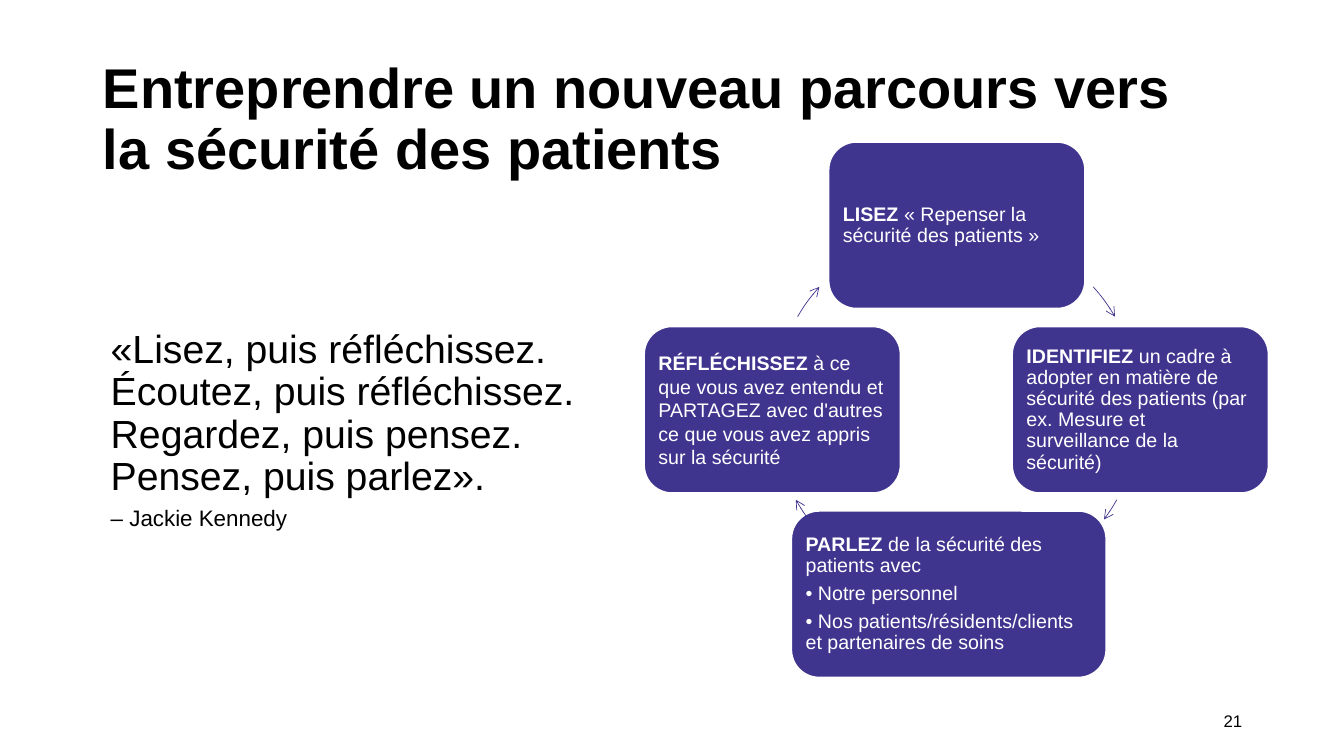
from dataclasses import dataclass
from typing import Any

from lxml.etree import SubElement
from pptx import Presentation
from pptx.dml.color import RGBColor
from pptx.enum.shapes import MSO_SHAPE
from pptx.enum.text import MSO_ANCHOR, MSO_AUTO_SIZE, PP_ALIGN
from pptx.oxml.ns import qn
from pptx.util import Pt

PX = 9144  # EMU per px, 100 px to the inch


@dataclass(frozen=True)
class Theme:
    font: str = "Arial"
    ink: RGBColor = RGBColor(0x00, 0x00, 0x00)
    paper: RGBColor = RGBColor(0xFF, 0xFF, 0xFF)
    accent: RGBColor = RGBColor(0x3F, 0x35, 0x8F)
    title_size: int = 40
    quote_size: int = 28
    author_size: int = 16
    step_size: int = 14
    number_size: int = 12


THEME = Theme()


@dataclass(frozen=True)
class Frame:
    left: int
    top: int
    width: int
    height: int

    def emu(self) -> tuple[int, ...]:
        return tuple(value * PX for value in (self.left, self.top, self.width, self.height))


@dataclass(frozen=True)
class Step:
    """A box of the cycle and the arc, in degrees clockwise from east, that leaves it."""
    frame: Frame
    keyword: str
    lines: tuple[str, ...]
    arc: tuple[float, float]
    spacing: float = 0.9


CYCLE = Frame(766, 224, 365, 365)
STEPS = (
    Step(Frame(822, 141, 254, 165), "LISEZ",
         (" « Repenser la sécurité des patients »",), (318.1, 329.6)),
    Step(Frame(1004, 324, 254, 165), "IDENTIFIEZ",
         (" un cadre à adopter en matière de sécurité des patients "
          "(par ex. Mesure et surveillance de la sécurité)",), (29.3, 36.6)),
    Step(Frame(785, 507, 312, 165), "PARLEZ",
         (" de la sécurité des patients avec", "• Notre personnel",
          "• Nos patients/résidents/clients et partenaires de soins"), (143.4, 150.7)),
    Step(Frame(639, 324, 254, 165), "RÉFLÉCHISSEZ",
         (" à ce que vous avez entendu et PARTAGEZ avec d'autres "
          "ce que vous avez appris sur la sécurité",), (210.4, 221.9), 1.0),
)


def apply_format(target: Any, values: dict[str, Any]) -> None:
    for name, value in values.items():
        setattr(target, name, value)


def format_span(span: Any, size: int, color: RGBColor, bold: bool = False) -> None:
    apply_format(span.font, {"name": THEME.font, "size": Pt(size), "bold": bold})
    span.font.color.rgb = color


def add_span(para: Any, text: str, size: int, color: RGBColor, bold: bool = False) -> None:
    span = para.add_run()
    span.text = text
    format_span(span, size, color, bold)


def next_para(text_frame: Any, index: int) -> Any:
    return text_frame.add_paragraph() if index else text_frame.paragraphs[0]


def add_title(page: Any, frame: Frame, text: str) -> None:
    title = page.shapes.title
    title.left, title.top, title.width, title.height = frame.emu()
    apply_format(title.text_frame, {"auto_size": MSO_AUTO_SIZE.NONE, "word_wrap": True,
                                    "vertical_anchor": MSO_ANCHOR.BOTTOM})
    para = title.text_frame.paragraphs[0]
    para.text = text
    apply_format(para, {"alignment": PP_ALIGN.LEFT, "line_spacing": 0.9,
                        "space_before": Pt(0)})
    for span in para.runs:
        format_span(span, THEME.title_size, THEME.ink, True)


def add_text(page: Any, frame: Frame, lines: tuple[tuple[str, int], ...],
             anchor: MSO_ANCHOR, para_format: dict[str, Any]) -> None:
    text_frame = page.shapes.add_textbox(*frame.emu()).text_frame
    apply_format(text_frame, {"word_wrap": True, "vertical_anchor": anchor})
    for index, (text, size) in enumerate(lines):
        para = next_para(text_frame, index)
        apply_format(para, {"space_after": Pt(6), **para_format})
        add_span(para, text, size, THEME.ink)


def add_step(page: Any, step: Step) -> None:
    box = page.shapes.add_shape(MSO_SHAPE.ROUNDED_RECTANGLE, *step.frame.emu())
    box.shadow.inherit = False
    box.fill.solid()
    box.fill.fore_color.rgb = THEME.accent
    box.line.color.rgb = THEME.paper
    box.line.width = Pt(1)
    margins = {f"margin_{side}": 6 * PX for side in ("left", "top", "right", "bottom")}
    apply_format(box.text_frame, {"word_wrap": True,
                                  "vertical_anchor": MSO_ANCHOR.MIDDLE, **margins})
    for index, line in enumerate(step.lines):
        para = next_para(box.text_frame, index)
        apply_format(para, {"alignment": PP_ALIGN.LEFT, "line_spacing": step.spacing,
                            "space_after": Pt(5)})
        if index == 0:
            add_span(para, step.keyword, THEME.step_size, THEME.paper, True)
        add_span(para, line, THEME.step_size, THEME.paper)


def add_arc_arrow(page: Any, arc: tuple[float, float]) -> None:
    arrow = page.shapes.add_shape(MSO_SHAPE.ARC, *CYCLE.emu())
    arrow.shadow.inherit = False
    arrow.fill.background()
    arrow.line.color.rgb = THEME.accent
    arrow.line.width = Pt(0.5)
    for index, degrees in enumerate(arc):
        arrow.adjustments[index] = degrees * 0.6  # 60000 units per degree, over 100000
    SubElement(arrow.line._get_or_add_ln(), qn("a:tailEnd"), type="arrow")


def main() -> None:
    deck = Presentation()
    deck.slide_width, deck.slide_height = 1333 * PX, 750 * PX
    page = deck.slides.add_slide(deck.slide_layouts[5])
    add_title(page, Frame(92, 40, 1150, 145),
              "Entreprendre un nouveau parcours vers \vla sécurité des patients")
    add_text(page, Frame(942, 695, 300, 40), (("21", THEME.number_size),),
             MSO_ANCHOR.MIDDLE, {"alignment": PP_ALIGN.RIGHT})
    for step in STEPS:
        add_step(page, step)
        add_arc_arrow(page, step.arc)
    quote = ("«Lisez, puis réfléchissez. Écoutez, puis réfléchissez. "
             "Regardez, puis pensez. Pensez, puis parlez».")
    add_text(page, Frame(100, 322, 567, 476),
             ((quote, THEME.quote_size), ("– Jackie Kennedy", THEME.author_size)),
             MSO_ANCHOR.TOP, {"line_spacing": 0.9})
    deck.save("out.pptx")


if __name__ == "__main__":
    main()
